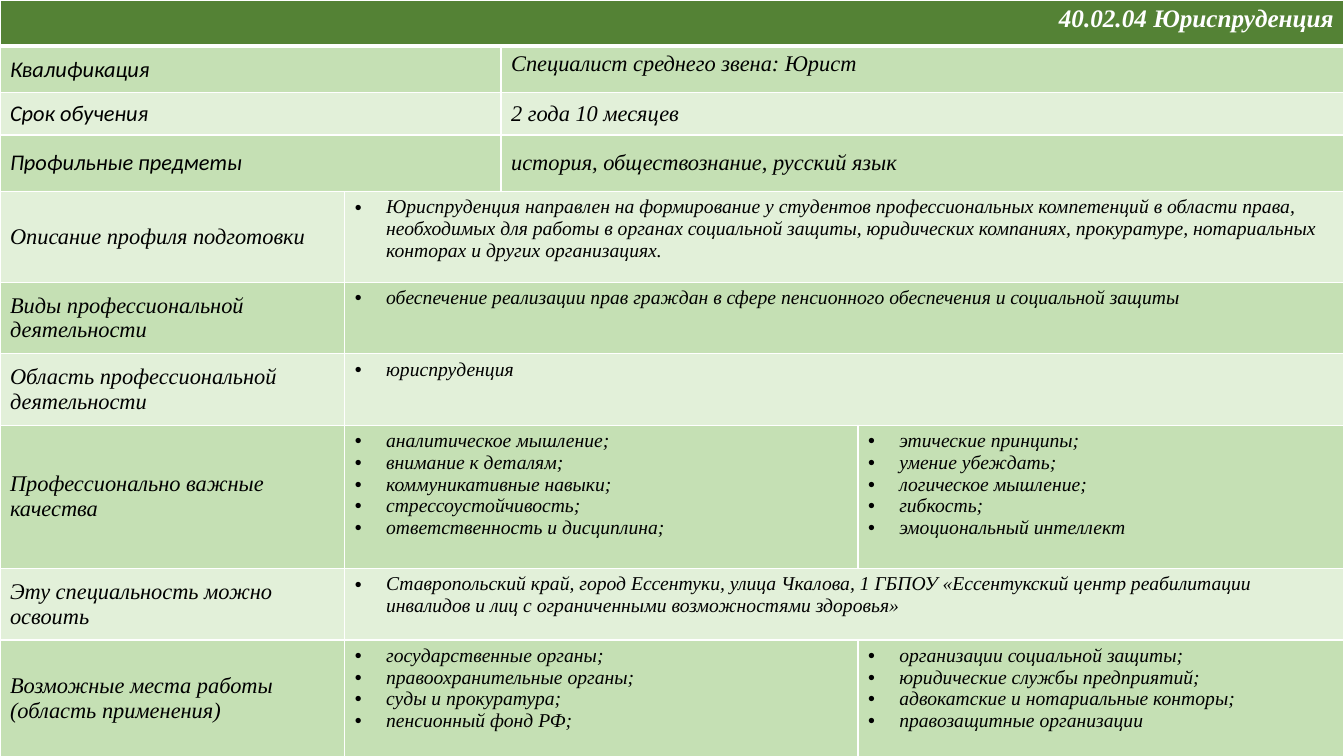
import pptx
import pptx.dml.color
import pptx.enum.text
import pptx.oxml
import pptx.oxml.ns
import pptx.util
from pptx.util import Inches

WHITE, BLACK = "FFFFFF", "000000"
HEADER_GREEN, MID_GREEN, PALE_GREEN = "548235", "C5E0B4", "E2F0D9"
SERIF, SANS = "Times New Roman", "Calibri"
ALIGN = pptx.enum.text.PP_ALIGN
ANCHOR = pptx.enum.text.MSO_ANCHOR

COLUMN_WIDTHS = [3.42, 1.55, 3.54, 4.82]
ROW_HEIGHTS = [0.46, 0.46, 0.42, 0.56, 0.9, 0.71, 0.71, 1.42, 0.71, 1.16]

TITLE = "40.02.04 Юриспруденция"

# Label, value, vertical anchor of the value
FACTS = [
    ("Квалификация", "Специалист среднего звена: Юрист", ANCHOR.TOP),
    ("Срок обучения", "2 года 10 месяцев", ANCHOR.MIDDLE),
    ("Профильные предметы", "история, обществознание, русский язык", ANCHOR.MIDDLE),
]

# Label, then one or two lists of bullets
SECTIONS = [
    ("Описание профиля подготовки", [
        ["Юриспруденция направлен на формирование у студентов профессиональных "
         "компетенций в области права, необходимых для работы в органах социальной "
         "защиты, юридических компаниях, прокуратуре, нотариальных конторах и "
         "других организациях."]]),
    ("Виды профессиональной деятельности", [
        ["обеспечение реализации прав граждан в сфере пенсионного обеспечения "
         "и социальной защиты"]]),
    ("Область профессиональной деятельности", [["юриспруденция"]]),
    ("Профессионально важные качества", [
        ["аналитическое мышление;", "внимание к деталям;", "коммуникативные навыки;",
         "стрессоустойчивость;", "ответственность и дисциплина;"],
        ["этические принципы;", "умение убеждать;", "логическое мышление;",
         "гибкость;", "эмоциональный интеллект"]]),
    ("Эту специальность можно освоить", [
        ["Ставропольский край, город Ессентуки, улица Чкалова, 1 ГБПОУ "
         "«Ессентукский центр реабилитации инвалидов и лиц с ограниченными "
         "возможностями здоровья»"]]),
    ("Возможные места работы (область применения)", [
        ["государственные органы;", "правоохранительные органы;",
         "суды и прокуратура;", "пенсионный фонд РФ;"],
        ["организации социальной защиты;", "юридические службы предприятий;",
         "адвокатские и нотариальные конторы;", "правозащитные организации"]]),
]


def rgb(value):
    return pptx.dml.color.RGBColor.from_string(value)


class SlideBuilder:
    """Holds the current slide and the style of its table."""

    def __init__(self, slide):
        self.slide = slide
        self.table = None

    def add_table(self, widths, heights):
        frame = self.slide.shapes.add_table(
            len(heights), len(widths), 0, 0,
            Inches(sum(widths)), Inches(sum(heights)))
        self.table = frame.table
        self.table.first_row = self.table.horz_banding = False
        for column, width in zip(self.table.columns, widths):
            column.width = Inches(width)
        for number, (row, height) in enumerate(zip(self.table.rows, heights)):
            row.height = Inches(height)
            for cell in row.cells:
                self.style_cell(cell, number)

    def style_cell(self, cell, number):
        # The rule under the header row is thicker than the others
        thick = {0: "lnB", 1: "lnT"}.get(number)
        properties = cell._tc.get_or_add_tcPr()
        for side in ("lnL", "lnR", "lnT", "lnB"):
            width = pptx.util.Pt(3 if side == thick else 1)
            properties.append(pptx.oxml.parse_xml(
                f'<a:{side} {pptx.oxml.ns.nsdecls("a")} w="{width}"><a:solidFill>'
                f'<a:srgbClr val="{WHITE}"/></a:solidFill></a:{side}>'))
        cell.fill.solid()
        band = MID_GREEN if number % 2 else PALE_GREEN
        cell.fill.fore_color.rgb = rgb(band if number else HEADER_GREEN)

    def add_bullet(self, paragraph):
        properties = paragraph._p.get_or_add_pPr()
        properties.set("marL", str(Inches(0.31)))
        properties.set("indent", str(Inches(-0.31)))
        for tag in ('buFont typeface="Arial"', 'buChar char="•"'):
            properties.append(pptx.oxml.parse_xml(
                f'<a:{tag} {pptx.oxml.ns.nsdecls("a")}/>'))

    def fill_cells(self, row, first, last, lines, size=16, font=SERIF, color=BLACK,
                   bold=False, align=ALIGN.LEFT, anchor=ANCHOR.MIDDLE, bullets=False):
        cell = self.table.cell(row, first)
        if last > first:
            cell.merge(self.table.cell(row, last))
        cell.vertical_anchor = anchor
        cell.text = "\n".join(lines)
        for paragraph in cell.text_frame.paragraphs:
            paragraph.alignment = align
            if bullets:
                self.add_bullet(paragraph)
            paragraph.font.name = font
            paragraph.font.size = pptx.util.Pt(size)
            paragraph.font.bold = bold
            paragraph.font.italic = True
            paragraph.font.color.rgb = rgb(color)


def main():
    presentation = pptx.Presentation()
    presentation.slide_width = Inches(13.33)
    presentation.slide_height = Inches(7.5)
    slide = presentation.slides.add_slide(presentation.slide_layouts[6])
    builder = SlideBuilder(slide)
    builder.add_table(COLUMN_WIDTHS, ROW_HEIGHTS)

    # Header row
    builder.fill_cells(0, 0, 3, [TITLE], size=18, color=WHITE, bold=True,
                       align=ALIGN.RIGHT, anchor=ANCHOR.TOP)

    # Short facts in two halves
    for row, (label, value, anchor) in enumerate(FACTS, start=1):
        builder.fill_cells(row, 0, 1, [label], font=SANS)
        builder.fill_cells(row, 2, 3, [value], anchor=anchor)

    # Sections with bullets in one or two columns
    for row, (label, lists) in enumerate(SECTIONS, start=1 + len(FACTS)):
        builder.fill_cells(row, 0, 0, [label])
        spans = [(1, 3)] if len(lists) == 1 else [(1, 2), (3, 3)]
        for (first, last), lines in zip(spans, lists):
            builder.fill_cells(row, first, last, lines, size=14,
                               anchor=ANCHOR.TOP, bullets=True)

    presentation.save("out.pptx")


if __name__ == "__main__":
    main()
